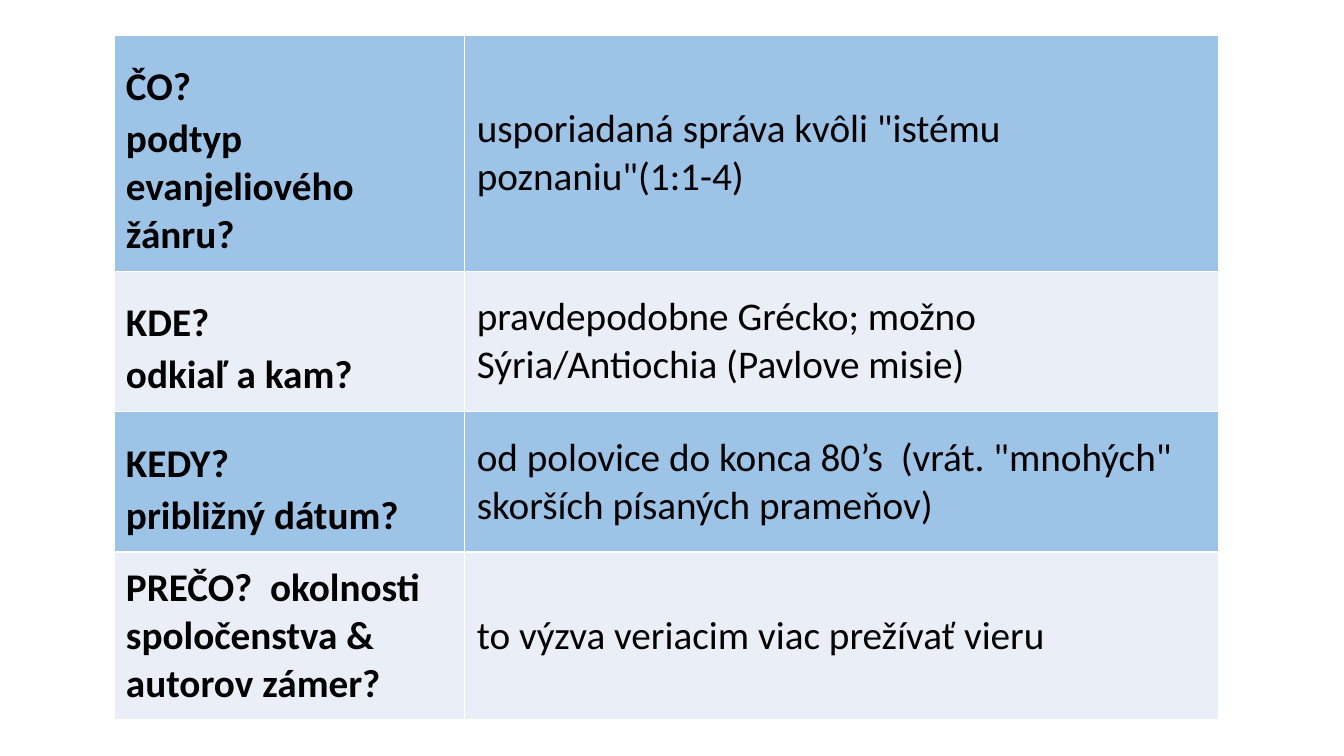
from lxml.etree import SubElement
from pptx import Presentation
from pptx.dml.color import RGBColor
from pptx.enum.text import MSO_ANCHOR
from pptx.oxml.ns import qn
from pptx.util import Inches, Pt

ROWS = [
    (2.32, ["ČO?", "podtyp evanjeliového žánru?"],
     'usporiadaná správa kvôli "istému poznaniu"(1:1-4)'),
    (1.39, ["KDE?", "odkiaľ a kam?"],
     "pravdepodobne Grécko; možno Sýria/Antiochia (Pavlove misie)"),
    (1.39, ["KEDY?", "približný dátum?"],
     'od polovice do konca 80’s  (vrát. "mnohých" skorších písaných prameňov)'),
    (1.66, ["PREČO?  okolnosti spoločenstva & autorov zámer?"],
     "to výzva veriacim viac prežívať vieru"),
]
COLS = [3.48, 7.48]
BANDS = ["9DC3E6", "EAEFF7"]
CELL = {"vertical_anchor": MSO_ANCHOR.MIDDLE,
        **{f"margin_{side}": Inches(0.12) for side in ("left", "right", "top", "bottom")}}


def color(value):
    return RGBColor.from_string(value)


def add_run(p, text, size=28, bold=False):
    r = p.add_run()
    r.text = text
    for name, value in {"name": "Calibri", "size": Pt(size), "bold": bold}.items():
        setattr(r.font, name, value)
    r.font.color.rgb = color("000000")


def add_borders(cell):
    tcPr = cell._tc.get_or_add_tcPr()
    for i, side in enumerate(("lnL", "lnR", "lnT", "lnB")):
        ln = tcPr.makeelement(qn(f"a:{side}"), {"w": str(Pt(1))})
        fill = SubElement(ln, qn("a:solidFill"))
        SubElement(fill, qn("a:srgbClr"), val="FFFFFF")
        tcPr.insert(i, ln)


def format_cell(cell, fill):
    for name, value in CELL.items():
        setattr(cell, name, value)
    cell.fill.solid()
    cell.fill.fore_color.rgb = color(fill)
    add_borders(cell)


def add_question(p, lines):
    add_run(p, lines[0], bold=True)
    for line in lines[1:]:
        add_run(p, " ", size=40, bold=True)
        p.add_line_break()
        add_run(p, line, bold=True)


def add_overview(s, left, top, width, height):
    table = s.shapes.add_table(len(ROWS), len(COLS), Inches(left), Inches(top),
                               Inches(width), Inches(height)).table
    for name in ("first_row", "horz_banding"):
        setattr(table, name, False)
    for column, size in zip(table.columns, COLS):
        column.width = Inches(size)
    for i, (size, question, answer) in enumerate(ROWS):
        table.rows[i].height = Inches(size)
        for cell in table.rows[i].cells:
            format_cell(cell, BANDS[i % 2])
        add_question(table.cell(i, 0).text_frame.paragraphs[0], question)
        add_run(table.cell(i, 1).text_frame.paragraphs[0], answer)


def main():
    prs = Presentation()
    prs.slide_width, prs.slide_height = Inches(13.33), Inches(7.5)
    s = prs.slides.add_slide(prs.slide_layouts[6])
    add_overview(s, 1.13, 0.35, sum(COLS), sum(row[0] for row in ROWS))
    prs.save("out.pptx")


if __name__ == "__main__":
    main()
